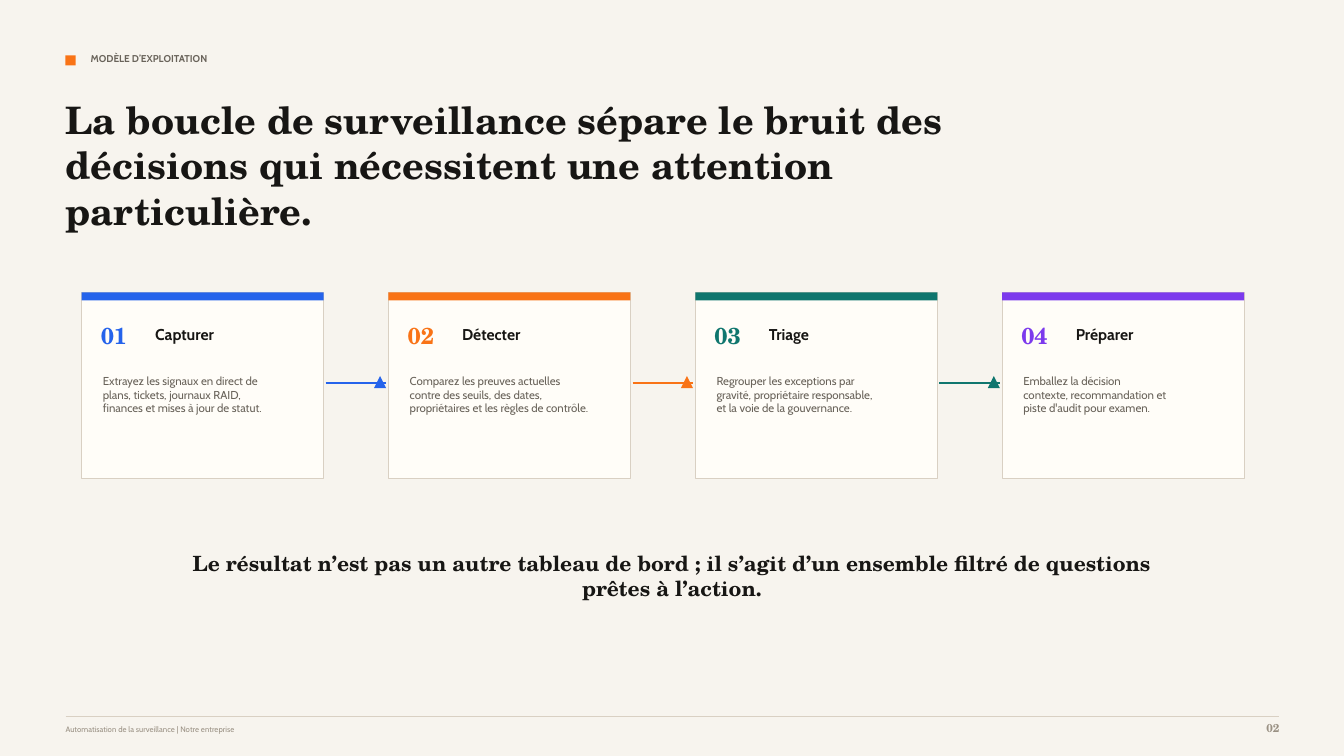
import pptx
import pptx.util
import pptx.dml.color
import pptx.enum.shapes
import pptx.enum.text
from lxml import etree

# Content
KICKER = "MODÈLE D’EXPLOITATION"
TITLE = ("La boucle de surveillance sépare le bruit des décisions "
         "qui nécessitent une attention particulière.")
STEPS = [
    ("Capturer", "2563EB", ["Extrayez les signaux en direct de",
                            "plans, tickets, journaux RAID,",
                            "finances et mises à jour de statut."]),
    ("Détecter", "F97316", ["Comparez les preuves actuelles",
                            "contre des seuils, des dates,",
                            "propriétaires et les règles de contrôle."]),
    ("Triage", "0F766E", ["Regrouper les exceptions par",
                          "gravité, propriétaire responsable,",
                          "et la voie de la gouvernance."]),
    ("Préparer", "7C3AED", ["Emballez la décision",
                            "contexte, recommandation et",
                            "piste d'audit pour examen."]),
]
CLOSING = ("Le résultat n’est pas un autre tableau de bord ; il s’agit "
           "d’un ensemble filtré de questions prêtes à l’action.")
FOOTER = "Automatisation de la surveillance | Notre entreprise"
PAGE = "02"

# Style
SANS, SERIF = "Cabin", "TeX Gyre Schola"
INK, BODY, MUTED, RULE = "171614", "69635A", "9A9184", "D9D0C3"
PAPER, CARD, ACCENT = "F7F4EE", "FFFDF8", "F97316"

# Layout, in inches
WIDE, HIGH, EDGE = 13.33, 7.5, 0.65
FIRST, LAST, TOP = 0.81, 9.94, 2.9
CARD_W, CARD_H = 2.4, 1.85
PITCH = (LAST - FIRST) / (len(STEPS) - 1)
ARROW_Y, ARROW_W, HEAD = 3.8, 0.6, 0.12

Inches, Pt = pptx.util.Inches, pptx.util.Pt
KIND = pptx.enum.shapes.MSO_SHAPE
ALIGN = pptx.enum.text.PP_ALIGN

deck = pptx.Presentation()
deck.slide_width, deck.slide_height = Inches(WIDE), Inches(HIGH)
slide = deck.slides.add_slide(deck.slide_layouts[6])


def color(code):
    return pptx.dml.color.RGBColor.from_string(code)


def block(x, y, w, h, fill, line=None, kind=KIND.RECTANGLE):
    shape = slide.shapes.add_shape(
        kind, Inches(x), Inches(y), Inches(w), Inches(h))
    shape.shadow.inherit = False
    shape.fill.solid()
    shape.fill.fore_color.rgb = color(fill)
    if line:
        shape.line.color.rgb = color(line)
        shape.line.width = Pt(0.75)
    else:
        shape.line.fill.background()


def rule(x, y, w, code, width):
    line = slide.shapes.add_connector(
        pptx.enum.shapes.MSO_CONNECTOR.STRAIGHT,
        Inches(x), Inches(y), Inches(x + w), Inches(y))
    line.line.color.rgb = color(code)
    line.line.width = Pt(width)
    etree.SubElement(line._element.spPr, pptx.oxml.ns.qn("a:effectLst"))


def label(x, y, w, h, lines, size, face, code, bold=True, align=ALIGN.LEFT):
    frame = slide.shapes.add_textbox(
        Inches(x), Inches(y), Inches(w), Inches(h)).text_frame
    frame.word_wrap = True
    frame.margin_left = frame.margin_right = 0
    frame.margin_top = frame.margin_bottom = 0
    frame.text = "\n".join(lines)
    for para in frame.paragraphs:
        para.alignment = align
        para.font.size, para.font.name = Pt(size), face
        para.font.bold = bold
        para.font.color.rgb = color(code)


# Background and heading
block(0, 0, WIDE, HIGH, PAPER)
block(EDGE, 0.55, 0.1, 0.1, ACCENT)
label(0.9, 0.52, 5.42, 0.19, [KICKER], 7.1, SANS, BODY)
label(EDGE, 0.96, 9.06, 1.08, [TITLE], 27, SERIF, INK)

# Step cards, with an arrow to the next card
for i, (name, tint, lines) in enumerate(STEPS):
    x = FIRST + i * PITCH
    block(x, TOP, CARD_W, CARD_H, CARD, RULE)
    block(x, TOP, CARD_W, 0.08, tint)
    label(x + 0.19, 3.19, 0.46, 0.29, [f"{i + 1:02}"], 16.5, SERIF, tint)
    label(x + 0.73, 3.22, 1.33, 0.21, [name], 11.2, SANS, INK)
    label(x + 0.21, 3.71, 1.92, 0.71, lines, 8.2, SANS, BODY, bold=False)
    if i < len(STEPS) - 1:
        start = x + CARD_W + 0.02
        rule(start, ARROW_Y, ARROW_W, tint, 1.75)
        block(start + ARROW_W - HEAD, 3.73, HEAD, HEAD, tint,
              kind=KIND.ISOSCELES_TRIANGLE)

# Closing line and footer
label(1.77, 5.46, 9.79, 0.44, [CLOSING], 15, SERIF, INK, align=ALIGN.CENTER)
rule(EDGE, 7.11, 12.04, RULE, 0.75)
label(EDGE, 7.19, 7.92, 0.15, [FOOTER], 5.6, SANS, MUTED, bold=False)
label(12.19, 7.15, 0.5, 0.19, [PAGE], 8.2, SERIF, MUTED, align=ALIGN.RIGHT)

deck.save("out.pptx")
